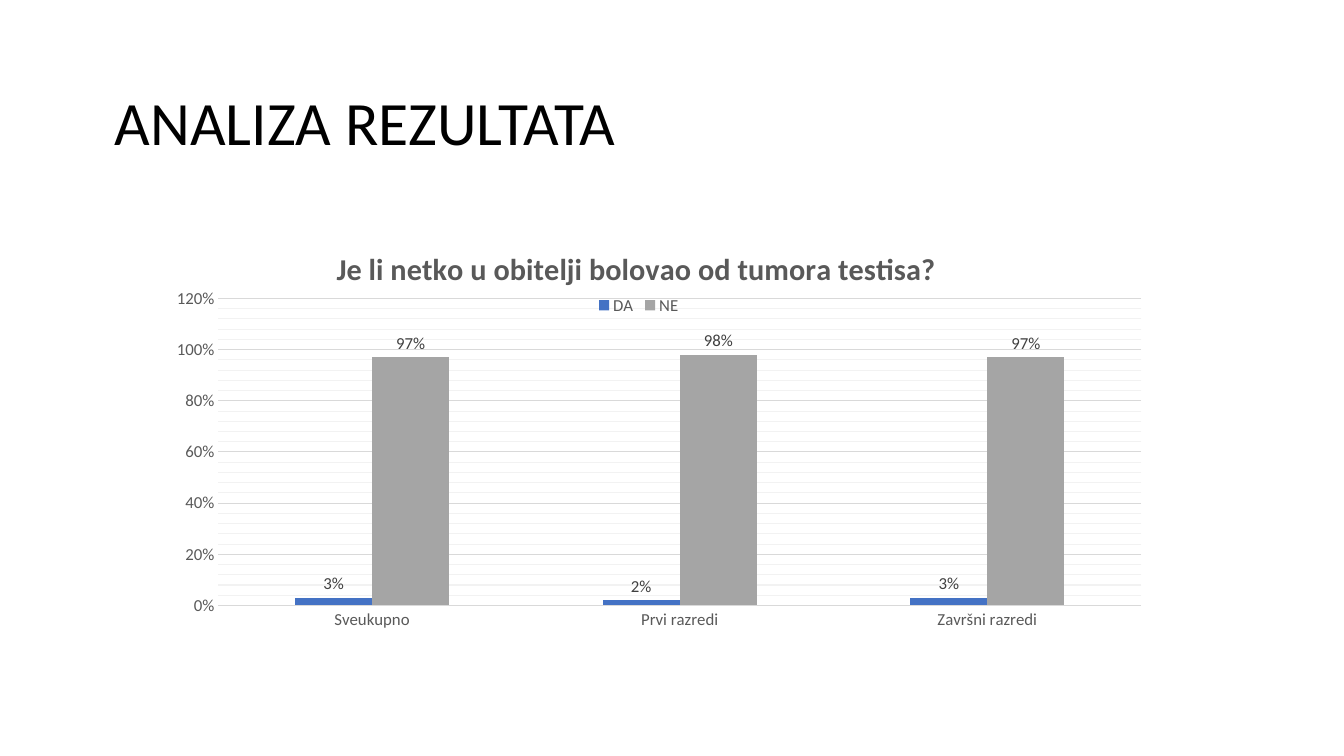
import lxml.etree
import pptx
import pptx.chart.data
import pptx.dml.color
import pptx.enum.chart
import pptx.enum.text
import pptx.oxml.ns
import pptx.util

Inches = pptx.util.Inches
Pt = pptx.util.Pt

COLORS = {
    "title": "000000",
    "text": "595959",
    "label": "404040",
    "grid": "D9D9D9",
    "minor_grid": "F2F2F2",
    "DA": "4472C4",
    "NE": "A5A5A5",
}
CATEGORIES = ["Sveukupno", "Prvi razredi", "Završni razredi"]
ANSWERS = {"DA": [0.03, 0.02, 0.03], "NE": [0.97, 0.98, 0.97]}
QUESTION = "Je li netko u obitelji bolovao od tumora testisa?"


def color(name):
    return pptx.dml.color.RGBColor.from_string(COLORS[name])


def apply(target, **values):
    for name, value in values.items():
        setattr(target, name, value)


def style_font(font, size, color_name, bold=False):
    apply(font, name="Calibri", size=Pt(size), bold=bold)
    font.color.rgb = color(color_name)


def style_line(line, color_name):
    line.color.rgb = color(color_name)
    line.width = Pt(0.75)


def style_minor_gridlines(axis, color_name):
    axis.has_minor_gridlines = True
    tag = pptx.oxml.ns.qn
    element = axis._element.find(tag("c:minorGridlines"))
    for name in ("c:spPr", "a:ln", "a:solidFill", "a:srgbClr"):
        element = lxml.etree.SubElement(element, tag(name))
        if name == "a:ln":
            element.set("w", str(Pt(0.75)))
    element.set("val", COLORS[color_name])


def set_layout(element, position, **values):
    tag = pptx.oxml.ns.qn
    for old in element.findall(tag("c:layout")):
        element.remove(old)
    layout = lxml.etree.Element(tag("c:layout"))
    manual = lxml.etree.SubElement(layout, tag("c:manualLayout"))
    for name, value in values.items():
        lxml.etree.SubElement(manual, tag(f"c:{name}")).set("val", str(value))
    element.insert(position, layout)


def add_title(page, text):
    title = page.shapes.title
    apply(title, left=Inches(1.04), top=Inches(0.52), width=Inches(11.5), height=Inches(1.45))
    frame = title.text_frame
    apply(frame, word_wrap=True, vertical_anchor=pptx.enum.text.MSO_ANCHOR.MIDDLE)
    para = frame.paragraphs[0]
    apply(para, alignment=pptx.enum.text.PP_ALIGN.LEFT, line_spacing=0.9)
    span = para.add_run()
    span.text = text
    style_font(span.font, 44, "title")


def style_axes(chart):
    for axis in (chart.category_axis, chart.value_axis):
        apply(
            axis,
            major_tick_mark=pptx.enum.chart.XL_TICK_MARK.NONE,
            minor_tick_mark=pptx.enum.chart.XL_TICK_MARK.NONE,
        )
        style_font(axis.tick_labels.font, 12, "text")
    style_line(chart.category_axis.format.line, "grid")
    scale = chart.value_axis
    apply(
        scale,
        minimum_scale=0,
        maximum_scale=1.2,
        major_unit=0.2,
        minor_unit=0.04,
        has_major_gridlines=True,
    )
    apply(scale.tick_labels, number_format="0%", number_format_is_linked=False)
    scale.format.line.fill.background()
    style_line(scale.major_gridlines.format.line, "grid")
    style_minor_gridlines(scale, "minor_grid")


def style_series(series):
    fill = series.format.fill
    fill.solid()
    fill.fore_color.rgb = color(series.name)
    series.invert_if_negative = False
    labels = series.data_labels
    apply(
        labels,
        show_value=True,
        number_format="0%",
        number_format_is_linked=False,
        position=pptx.enum.chart.XL_LABEL_POSITION.OUTSIDE_END,
    )
    style_font(labels.font, 12, "label")


def add_chart_heading(chart, text):
    chart.has_title = True
    span = chart.chart_title.text_frame.paragraphs[0].add_run()
    span.text = text
    style_font(span.font, 21.6, "text", bold=True)
    set_layout(chart.chart_title._element, 1, xMode="edge", yMode="edge", x=0.2, y=0.045)


def add_legend(chart):
    chart.has_legend = True
    legend = chart.legend
    apply(legend, position=pptx.enum.chart.XL_LEGEND_POSITION.TOP, include_in_layout=False)
    style_font(legend.font, 12, "text")
    set_layout(legend._element, 1, xMode="edge", yMode="edge", x=0.455, y=0.16, w=0.09, h=0.05)


def add_answer_chart(page):
    data = pptx.chart.data.CategoryChartData(number_format="0%")
    data.categories = CATEGORIES
    for name, values in ANSWERS.items():
        data.add_series(name, values)
    chart = page.shapes.add_chart(
        pptx.enum.chart.XL_CHART_TYPE.COLUMN_CLUSTERED,
        Inches(1.25), Inches(2.2), Inches(10.17), Inches(4.48), data,
    ).chart
    style_font(chart.font, 10, "title")
    add_chart_heading(chart, QUESTION)
    add_legend(chart)
    style_axes(chart)
    plot = chart.plots[0]
    apply(plot, gap_width=199, overlap=0, vary_by_categories=False)
    for series in plot.series:
        style_series(series)
    set_layout(
        plot._element.getparent(), 0, layoutTarget="inner", xMode="edge", yMode="edge",
        x=0.09, y=0.17, w=0.9, h=0.68,
    )


def main():
    deck = pptx.Presentation()
    apply(deck, slide_width=Inches(13.33), slide_height=Inches(7.5))
    page = deck.slides.add_slide(deck.slide_layouts[5])
    add_title(page, "ANALIZA REZULTATA")
    add_answer_chart(page)
    deck.save("out.pptx")


if __name__ == "__main__":
    main()
